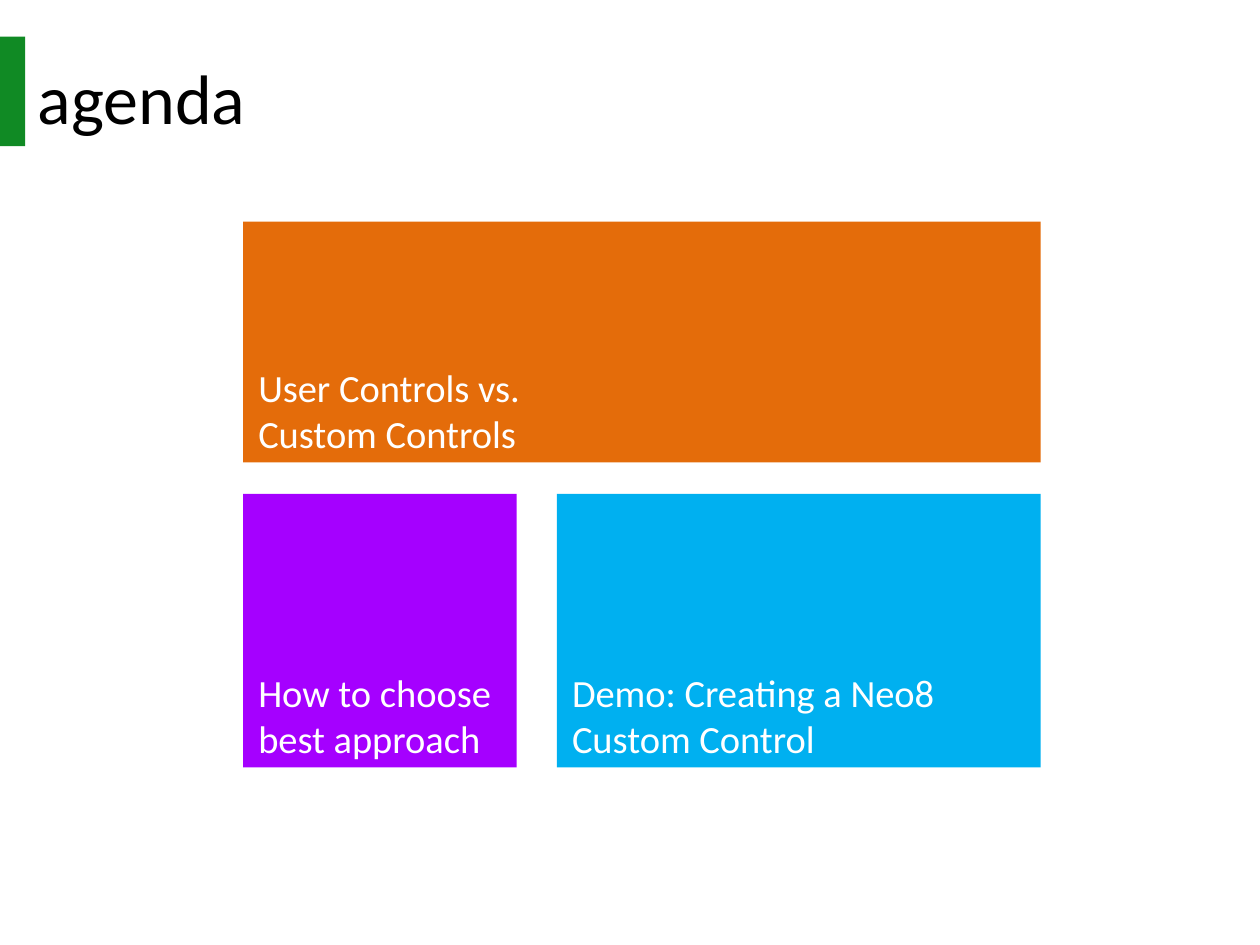
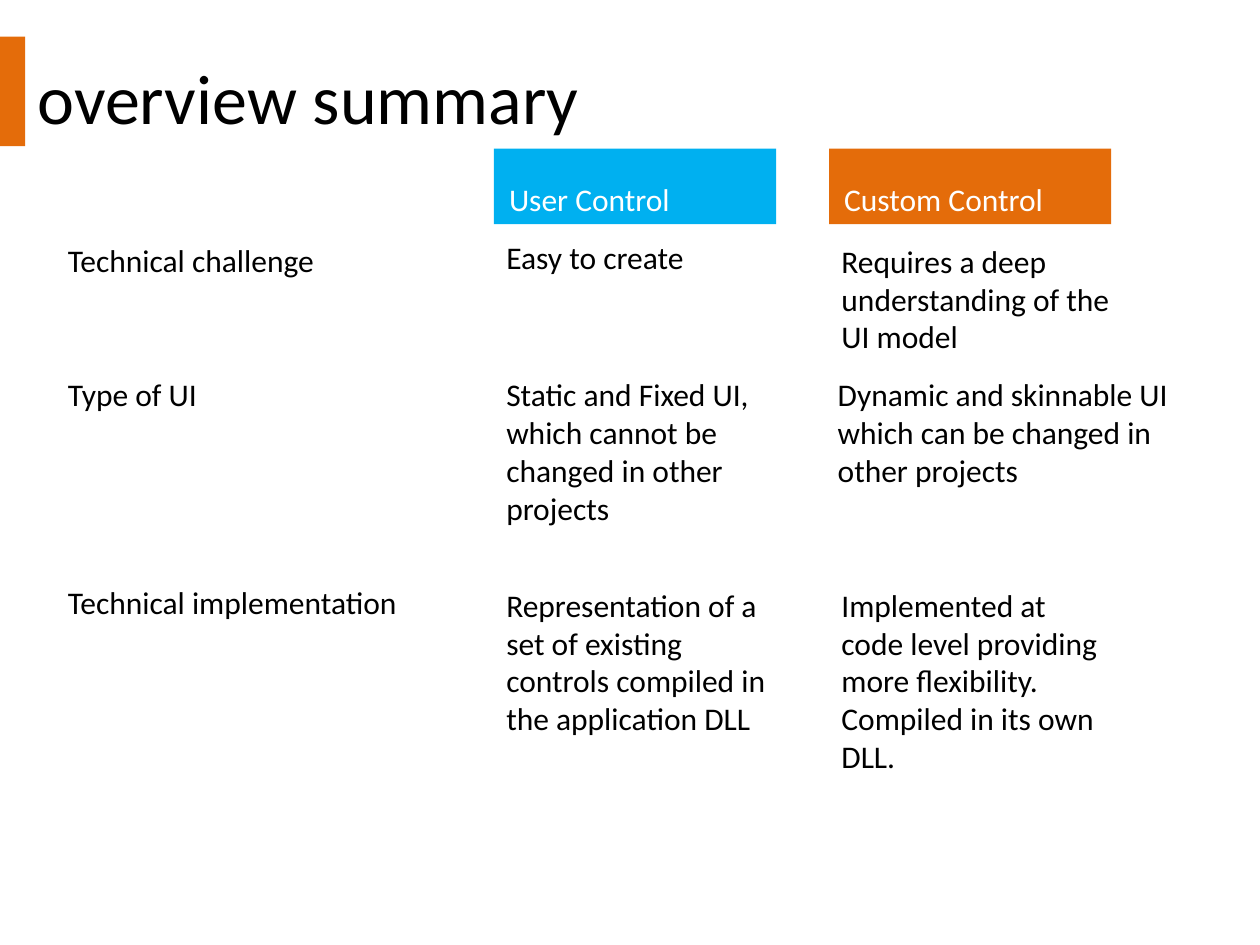
from pptx import Presentation
from pptx.dml.color import RGBColor
from pptx.enum.shapes import MSO_SHAPE as Shape
from pptx.enum.text import MSO_ANCHOR as Anchor, MSO_AUTO_SIZE as AutoSize, PP_ALIGN as Align
from pptx.util import Inches, Pt

FONT = "Calibri"
BLACK, WHITE = "000000", "FFFFFF"
GREEN, ORANGE, PURPLE, BLUE = "108A24", "E46C0A", "A500FF", "00B0F0"

TILE_LEFT, TILE_RIGHT = 1.93, 8.26
TILE_ROWS = [(1.76, 1.91), (3.92, 2.17)]
SQUARE, GUTTER = 2.17, 0.32

LABEL_X, USER_X, CUSTOM_X = 0.44, 3.92, 6.58
LABEL_W, COLUMN_W = 2.99, 2.24
HEADER_TOP, HEADER_H = 1.18, 0.6
LINE_H, PADDING = 0.305, 0.1


def color(value):
    """Turn a hex string into a colour."""
    return RGBColor.from_string(value)


def box(left, top, width, height):
    """Turn inches into a position and size."""
    return [Inches(n) for n in (left, top, width, height)]


def write(sp, text, size=18, fill=BLACK, anchor=Anchor.TOP, insets=(0.1, 0.05, 0.1, 0.05)):
    """Put left-aligned formatted text into a shape."""
    tf = sp.text_frame
    tf.word_wrap = True
    tf.auto_size = AutoSize.NONE
    tf.vertical_anchor = anchor
    tf.margin_left, tf.margin_top, tf.margin_right, tf.margin_bottom = box(*insets)
    p = tf.paragraphs[0]
    p.text = text
    p.alignment = Align.LEFT
    for r in p.runs:
        r.font.name = FONT
        r.font.size = Pt(size)
        r.font.color.rgb = color(fill)


def block(s, area, fill):
    """Draw a plain filled rectangle."""
    sp = s.shapes.add_shape(Shape.RECTANGLE, *box(*area))
    sp.shadow.inherit = False
    sp.fill.solid()
    sp.fill.fore_color.rgb = color(fill)
    sp.line.fill.background()
    return sp


def tile(s, text, area, fill, size=22):
    """Draw a coloured tile with white text at its foot."""
    write(block(s, area, fill), text, size, WHITE, Anchor.BOTTOM, (0.12, 0.04, 0.1, 0.05))


def note(s, text, left, top, width, lines=1):
    """Add a text box tall enough for its lines."""
    height = lines * LINE_H + PADDING
    write(s.shapes.add_textbox(*box(left, top, width, height)), text)


def titled_slide(prs, title, accent):
    """Add a slide with a title and an accent band at the edge."""
    s = prs.slides.add_slide(prs.slide_layouts[5])
    sp = s.shapes.title
    sp.left, sp.top, sp.width, sp.height = box(0.2, 0.36, 9, 0.71)
    write(sp, title, 40, insets=(0.1, 0.07, 0.1, 0.05))
    block(s, (0, 0.29, 0.2, 0.87), accent)
    return s


def agenda(prs):
    """Build the agenda of three tiles."""
    s = titled_slide(prs, "agenda", GREEN)
    (top, height), (low_top, low_height) = TILE_ROWS
    wide_left = TILE_LEFT + SQUARE + GUTTER
    tile(s, "How to choose best approach", (TILE_LEFT, low_top, SQUARE, low_height), PURPLE)
    tile(s, "User Controls vs. \vCustom Controls",
         (TILE_LEFT, top, TILE_RIGHT - TILE_LEFT, height), ORANGE)
    tile(s, "Demo: Creating a Neo8 Custom Control",
         (wide_left, low_top, TILE_RIGHT - wide_left, low_height), BLUE)


def overview(prs):
    """Build the comparison of the two kinds of control."""
    s = titled_slide(prs, "overview summary", ORANGE)
    for text, left, fill in (("User Control", USER_X, BLUE), ("Custom Control", CUSTOM_X, ORANGE)):
        tile(s, text, (left, HEADER_TOP, COLUMN_W, HEADER_H), fill, 18)
    for text, top in (("Technical challenge", 1.86), ("Type of UI", 2.93),
                      ("Technical implementation", 4.58)):
        note(s, text, LABEL_X, top, LABEL_W)
    for text, top, width, lines in (
        ("Easy to create", 1.84, COLUMN_W, 1),
        ("Static and Fixed UI, which cannot be changed in other projects", 2.93, COLUMN_W, 4),
        ("Representation of a set of existing controls compiled in the application DLL",
         4.6, 2.33, 4),
    ):
        note(s, text, USER_X, top, width, lines)
    for text, left, top, width, lines in (
        ("Requires a deep understanding of the\vUI model", CUSTOM_X, 1.87, LABEL_W, 3),
        ("Dynamic and skinnable UI which can be changed in other projects",
         6.55, 2.93, LABEL_W, 3),
        ("Implemented at code level providing more flexibility. Compiled in its own DLL.",
         CUSTOM_X, 4.6, COLUMN_W, 5),
    ):
        note(s, text, left, top, width, lines)


def main():
    """Build and save the presentation."""
    prs = Presentation()
    prs.slide_width, prs.slide_height = Inches(10), Inches(7.5)
    agenda(prs)
    overview(prs)
    prs.save("out.pptx")


if __name__ == "__main__":
    main()
